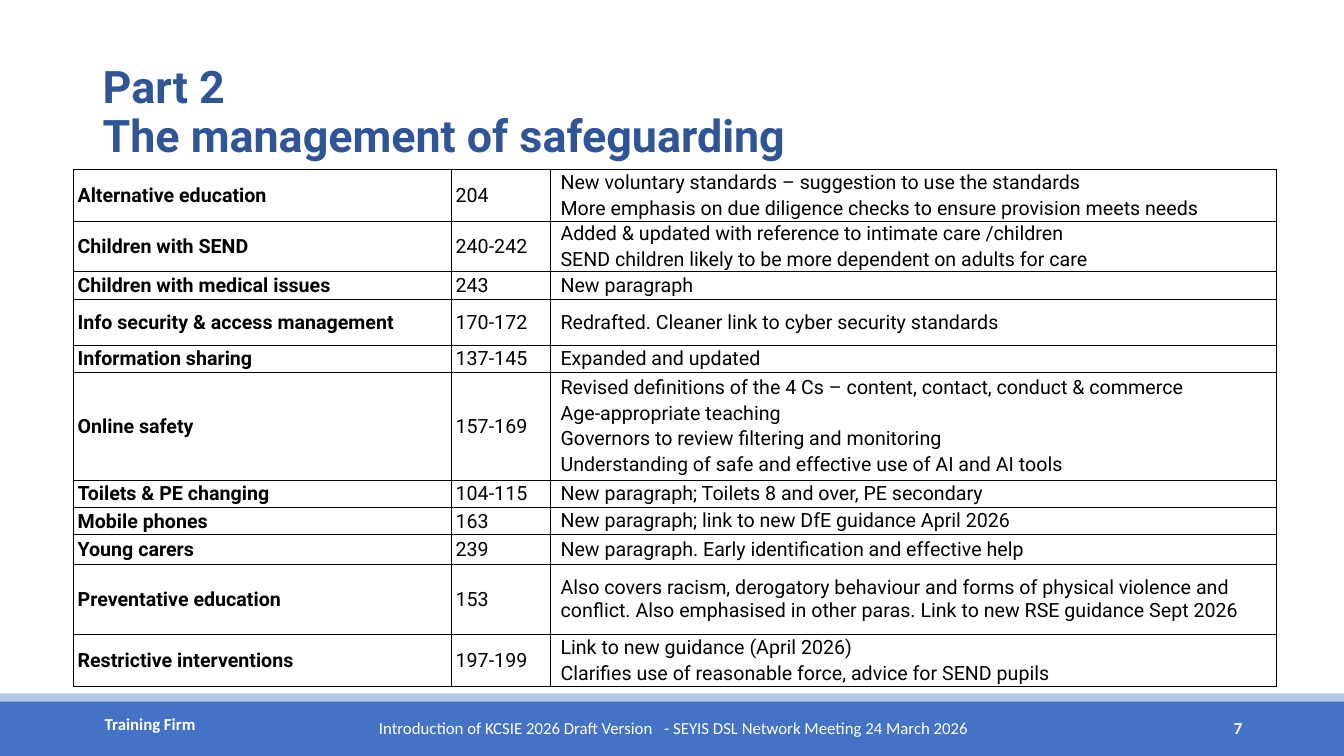
from lxml import etree
from pptx import Presentation
from pptx import util as u
from pptx.dml.color import RGBColor
from pptx.enum import shapes, text
from pptx.oxml.ns import qn

WIDTH, HEIGHT = 13.33, 7.5
BLACK, WHITE, NAVY = "000000", "FFFFFF", "2F5597"
BLUE, PALE_BLUE = "4472C4", "B4C7E7"

TITLE = "Part 2\vThe management of safeguarding"
FOOTER = "Introduction of KCSIE 2026 Draft Version\t- SEYIS DSL Network Meeting 24 March 2026"
ORGANISATION = "Training Firm"
PAGE = "7"

COLUMN_WIDTHS = [3.75, 0.98, 7.2]
# Topic, paragraph numbers, changes, row height
TOPICS = [
    ("Alternative education", "204",
     ["New voluntary standards – suggestion to use the standards",
      "More emphasis on due diligence checks to ensure provision meets needs"], 0.52),
    ("Children with SEND", "240-242",
     ["Added & updated with reference to intimate care /children",
      "SEND children likely to be more dependent on adults for care"], 0.49),
    ("Children with medical issues", "243", ["New paragraph"], 0.28),
    ("Info security & access management", "170-172",
     ["Redrafted. Cleaner link to cyber security standards"], 0.45),
    ("Information sharing", "137-145", ["Expanded and updated"], 0.27),
    ("Online safety", "157-169",
     ["Revised definitions of the 4 Cs – content, contact, conduct & commerce",
      "Age-appropriate teaching",
      "Governors to review filtering and monitoring",
      "Understanding of safe and effective use of AI and AI tools"], 1.07),
    ("Toilets & PE changing", "104-115",
     ["New paragraph; Toilets 8 and over, PE secondary"], 0.27),
    ("Mobile phones", "163",
     ["New paragraph; link to new DfE guidance April 2026"], 0.27),
    ("Young carers", "239",
     ["New paragraph. Early identification and effective help"], 0.3),
    ("Preventative education", "153",
     ["Also covers racism, derogatory behaviour and forms of physical violence and "
      "conflict. Also emphasised in other paras. Link to new RSE guidance Sept 2026"], 0.69),
    ("Restrictive interventions", "197-199",
     ["Link to new guidance (April 2026)",
      "Clarifies use of reasonable force, advice for SEND pupils"], 0.52),
]


def color(value):
    return RGBColor.from_string(value)


def style(paragraph, font_name, size, value, bold=False):
    for run in paragraph.runs:
        font = run.font
        font.name, font.size, font.bold = font_name, u.Pt(size), bold
        font.color.rgb = color(value)


def add_band(slide, top, height, value):
    band = slide.shapes.add_shape(shapes.MSO_SHAPE.RECTANGLE, 0, u.Inches(top),
                                  u.Inches(WIDTH), u.Inches(height))
    band.shadow.inherit = False
    band.fill.solid()
    band.fill.fore_color.rgb = color(value)
    band.line.fill.background()


def add_text(slide, box, words, font_name, size, value, bold=False,
             anchor=text.MSO_ANCHOR.TOP, wrap=True):
    frame = slide.shapes.add_textbox(*map(u.Inches, box)).text_frame
    frame.word_wrap, frame.vertical_anchor = wrap, anchor
    paragraph = frame.paragraphs[0]
    paragraph.text = words
    style(paragraph, font_name, size, value, bold)
    return paragraph


def add_borders(cell):
    properties = cell._tc.get_or_add_tcPr()
    for side in ("a:lnL", "a:lnR", "a:lnT", "a:lnB"):
        line = etree.SubElement(properties, qn(side), w=str(u.Pt(1)))
        fill = etree.SubElement(line, qn("a:solidFill"))
        etree.SubElement(fill, qn("a:srgbClr"), val=BLACK)


def fill_cell(cell, lines, bold, side_margin, top_margin, indent):
    add_borders(cell)
    cell.fill.background()
    cell.vertical_anchor = text.MSO_ANCHOR.MIDDLE
    cell.margin_left = cell.margin_right = u.Inches(side_margin)
    cell.margin_top, cell.margin_bottom = u.Inches(top_margin), 0
    cell.text_frame.text = "\n".join(lines)
    for index, paragraph in enumerate(cell.text_frame.paragraphs):
        paragraph._p.get_or_add_pPr().set("marL", str(u.Inches(indent)))
        paragraph.space_before = u.Pt(1 if index else 0)
        paragraph.space_after = u.Pt(1)
        style(paragraph, "Roboto", 14, BLACK, bold)


def add_topics(slide):
    heights = [topic[-1] for topic in TOPICS]
    frame = slide.shapes.add_table(
        len(TOPICS), len(COLUMN_WIDTHS), u.Inches(0.73), u.Inches(1.68),
        u.Inches(sum(COLUMN_WIDTHS)), u.Inches(sum(heights)))
    table = frame.table
    table.first_row = table.horz_banding = False
    for column, width in zip(table.columns, COLUMN_WIDTHS):
        column.width = u.Inches(width)
    for row, (topic, numbers, changes, height) in zip(table.rows, TOPICS):
        row.height = u.Inches(height)
        fill_cell(row.cells[0], [topic], True, 0.04, 0.01, 0)
        fill_cell(row.cells[1], [numbers], False, 0.04, 0.01, 0)
        fill_cell(row.cells[2], changes, False, 0, 0, 0.1)


def main():
    presentation = Presentation()
    presentation.slide_width, presentation.slide_height = u.Inches(WIDTH), u.Inches(HEIGHT)
    slide = presentation.slides.add_slide(presentation.slide_layouts[6])
    middle = text.MSO_ANCHOR.MIDDLE

    # Footer
    add_band(slide, 6.95, 0.55, BLUE)
    add_text(slide, (0.94, 7.03, 1.18, 0.3), ORGANISATION, "Calibri", 12, WHITE, True, wrap=False)
    meeting = add_text(slide, (3.66, 7.07, 6.2, 0.3), FOOTER, "Calibri", 12, WHITE)
    tabs = etree.SubElement(meeting._p.get_or_add_pPr(), qn("a:tabLst"))
    etree.SubElement(tabs, qn("a:tab"), pos=str(u.Inches(2.83)), algn="l")
    add_band(slide, 6.88, 0.08, PALE_BLUE)

    # Title
    title = add_text(slide, (0.92, 0.4, 11.5, 1.45), TITLE, "Roboto", 32, NAVY, True, middle)
    title.line_spacing = 0.9

    # Table of changes
    add_topics(slide)

    # Page number
    number = add_text(slide, (9.42, 7.02, 3, 0.4), PAGE, "Calibri", 12, WHITE, True, middle)
    number.alignment = text.PP_ALIGN.RIGHT

    presentation.save("out.pptx")


if __name__ == "__main__":
    main()
